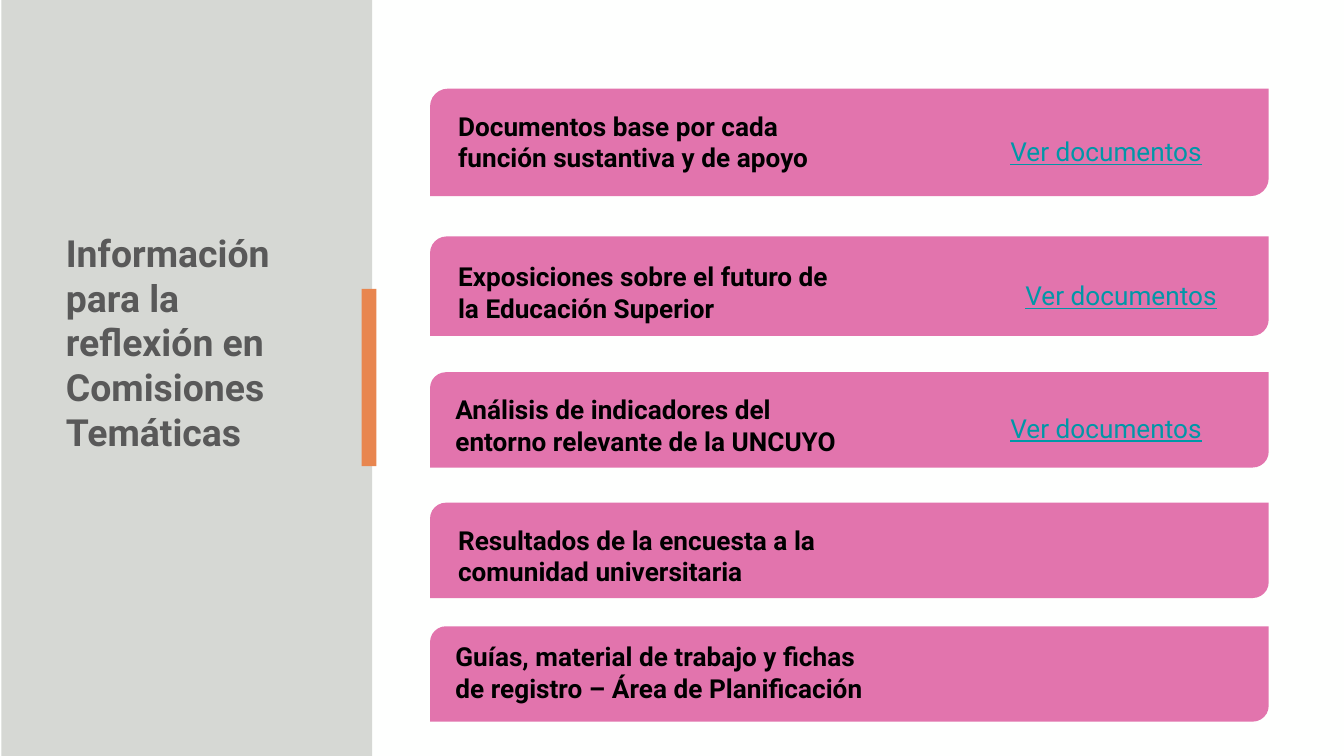
from dataclasses import dataclass

from pptx import Presentation
from pptx.dml.color import RGBColor
from pptx.enum.shapes import MSO_SHAPE
from pptx.enum.text import MSO_ANCHOR, MSO_AUTO_SIZE, PP_ALIGN
from pptx.util import Pt


@dataclass(frozen=True)
class Theme:
    font: str = "Roboto"
    back: str = "FEFFFE"
    panel: str = "D6D8D4"
    accent: str = "E8864F"
    bar: str = "E274AD"
    title: str = "595959"
    label: str = "000000"
    link: str = "0097A7"
    big: int = 20
    body: int = 14


THEME = Theme()
BAR_LEFT, BAR_WIDTH = 230.4, 449.3
LINK = "Ver documentos"

# Each row: bar top and height, label text and box, link corner
ROWS = [
    (47.5, 57.6, "Documentos base por cada función sustantiva y de apoyo",
     (238.3, 55.4, 224.6, 41), (534.2, 69.1)),
    (126.7, 53.3, "Exposiciones sobre el futuro de la Educación Superior",
     (238.3, 136.1, 224.6, 41), (542.2, 146.2)),
    (199.4, 51.1, "Análisis de indicadores del entorno relevante de la UNCUYO",
     (236.9, 207.4, 224.6, 41), (534.2, 217.4)),
    (269.3, 51.1, "Resultados de la encuesta a la comunidad universitaria",
     (238.3, 277.2, 224.6, 41), None),
    (335.5, 51.1, "Guías, material de trabajo y fichas de registro – Área de Planificación",
     (236.9, 339.8, 245.5, 41), None),
]


def apply(item, values):
    for name, value in values.items():
        setattr(item, name, value)


def place(shape, box):
    names = ("left", "top", "width", "height")
    apply(shape, dict(zip(names, map(Pt, box))))


def add_block(slide, kind, box, color):
    shape = slide.shapes.add_shape(kind, *map(Pt, box))
    shape.shadow.inherit = False
    shape.fill.solid()
    shape.fill.fore_color.rgb = RGBColor.from_string(color)
    shape.line.fill.background()
    return shape


def write(shape, text, size, color, anchor=MSO_ANCHOR.TOP, **style):
    frame = shape.text_frame
    apply(frame, {
        "text": text,
        "word_wrap": True,
        "auto_size": MSO_AUTO_SIZE.NONE,
        "vertical_anchor": anchor,
        "margin_left": Pt(7.2), "margin_right": Pt(7.2),
        "margin_top": Pt(3.6), "margin_bottom": Pt(3.6),
    })
    line = frame.paragraphs[0]
    line.alignment = PP_ALIGN.LEFT
    font = line.runs[0].font
    apply(font, {"name": THEME.font, "size": Pt(size), **style})
    font.color.rgb = RGBColor.from_string(color)


def add_text(slide, box, text, color, **style):
    shape = slide.shapes.add_textbox(*map(Pt, box))
    write(shape, text, THEME.body, color, **style)


def add_row(slide, top, height, text, box, link):
    bar = add_block(slide, MSO_SHAPE.ROUND_2_DIAG_RECTANGLE,
                    (BAR_LEFT, top, BAR_WIDTH, height), THEME.bar)
    bar.adjustments[0] = 0.167
    bar.adjustments[1] = 0
    add_text(slide, box, text, THEME.label, bold=True)
    if link:
        add_text(slide, (*link, 137.5, 24.5), LINK, THEME.link, underline=True)


def add_side(slide):
    add_block(slide, MSO_SHAPE.RECTANGLE, (0.7, 0, 198.7, 405), THEME.panel)
    add_block(slide, MSO_SHAPE.RECTANGLE, (193.7, 154.8, 7.9, 95), THEME.accent)
    title = slide.shapes.title
    place(title, (28.1, 94.3, 145.4, 152.6))
    write(title, "Información para la reflexión en Comisiones Temáticas",
          THEME.big, THEME.title, MSO_ANCHOR.BOTTOM, bold=True)
    # Bring the title in front of the panel
    slide.shapes._spTree.append(title._element)


def main():
    deck = Presentation()
    apply(deck, {"slide_width": Pt(720), "slide_height": Pt(405)})
    slide = deck.slides.add_slide(deck.slide_layouts[5])
    fill = slide.background.fill
    fill.solid()
    fill.fore_color.rgb = RGBColor.from_string(THEME.back)

    # Side panel with title
    add_side(slide)

    # Bars with labels and links
    for row in ROWS:
        add_row(slide, *row)

    deck.save("out.pptx")


if __name__ == "__main__":
    main()
